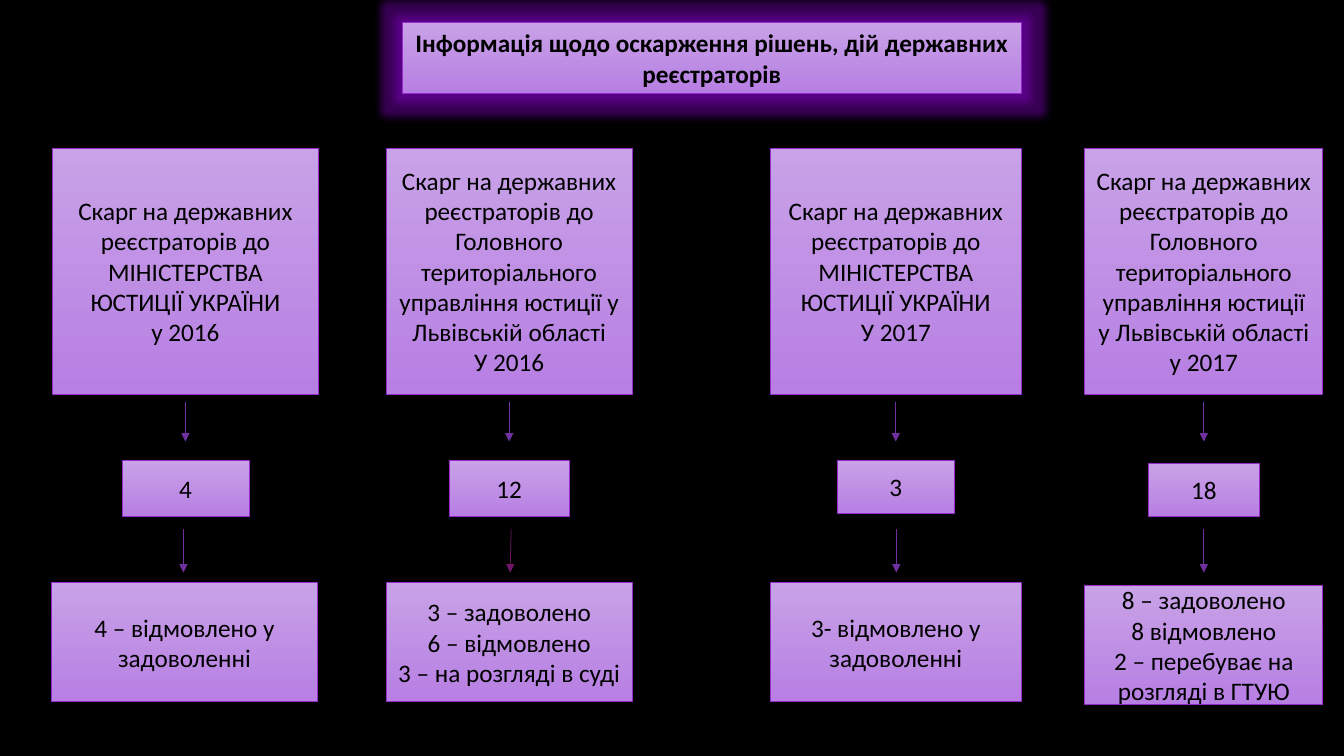
from lxml import etree
from pptx import Presentation
from pptx.dml.color import RGBColor
from pptx.enum.shapes import MSO_CONNECTOR, MSO_SHAPE
from pptx.enum.text import MSO_ANCHOR, PP_ALIGN
from pptx.oxml import parse_xml
from pptx.oxml.ns import nsdecls, qn
from pptx.util import Inches, Pt

RECTANGLE = MSO_SHAPE.RECTANGLE
STRAIGHT = MSO_CONNECTOR.STRAIGHT
MIDDLE = MSO_ANCHOR.MIDDLE
CENTER = PP_ALIGN.CENTER

BLACK = RGBColor(0x00, 0x00, 0x00)
LILAC_LIGHT = RGBColor(0xC8, 0xA1, 0xE7)
LILAC_DARK = RGBColor(0xB7, 0x7F, 0xE3)
BORDER = RGBColor(0x97, 0x2A, 0xCD)
PURPLE = RGBColor(0x70, 0x30, 0xA0)
PLUM = RGBColor(0x72, 0x14, 0x67)
GLOW = RGBColor(0x8A, 0x00, 0xD0)

TITLE = "Інформація щодо оскарження рішень, дій державних реєстраторів"
MINISTRY = "Скарг на державних реєстраторів до МІНІСТЕРСТВА ЮСТИЦІЇ УКРАЇНИ"
REGIONAL_OFFICE = ("Скарг на державних реєстраторів до Головного територіального "
                   "управління юстиції у Львівській області")

COLUMNS = [
    {"left": 0.52, "width": 2.64, "authority": [MINISTRY, "у 2016"],
     "count": "4", "count_box": (4.57, 1.26, 0.55),
     "outcome": ["4 – відмовлено у задоволенні"], "outcome_at": (0.51, 5.78),
     "outcome_arrow": (1.82, 1.82, PURPLE)},
    {"left": 3.83, "width": 2.44, "authority": [REGIONAL_OFFICE, "У 2016"],
     "count": "12", "count_box": (4.57, 1.19, 0.55),
     "outcome": ["3 – задоволено", "6 – відмовлено", "3 – на розгляді в суді"],
     "outcome_at": (3.83, 5.78), "outcome_arrow": (5.07, 5.06, PLUM)},
    {"left": 7.64, "width": 2.49, "authority": [MINISTRY, "У 2017"],
     "count": "3", "count_box": (4.57, 1.16, 0.52),
     "outcome": ["3- відмовлено у задоволенні"], "outcome_at": (7.64, 5.78),
     "outcome_arrow": (8.89, 8.89, PURPLE)},
    {"left": 10.76, "width": 2.36, "authority": [REGIONAL_OFFICE, "у 2017"],
     "count": "18", "count_box": (4.6, 1.1, 0.52),
     "outcome": ["8 – задоволено", "8 відмовлено", "2 – перебуває на розгляді в ГТУЮ"],
     "outcome_at": (10.76, 5.81), "outcome_arrow": (11.94, 11.94, PURPLE)},
]
AUTHORITY_TOP, AUTHORITY_HEIGHT = 1.47, 2.44
OUTCOME_HEIGHT = 1.18
COUNT_ARROW_SPAN = (3.99, 4.38)
OUTCOME_ARROW_SPAN = (5.25, 5.68)


def add_box(slide, left, top, width, height, lines, bold=False):
    box = slide.shapes.add_shape(
        RECTANGLE, Inches(left), Inches(top), Inches(width), Inches(height))
    box.shadow.inherit = False
    box.fill.gradient()
    box.fill.gradient_angle = 270
    for stop, color in zip(box.fill.gradient_stops, (LILAC_LIGHT, LILAC_DARK)):
        stop.color.rgb = color
    box.line.color.rgb = BORDER
    box.line.width = Pt(0.5)
    frame = box.text_frame
    frame.word_wrap = True
    frame.vertical_anchor = MIDDLE
    for index, line in enumerate(lines):
        paragraph = frame.add_paragraph() if index else frame.paragraphs[0]
        paragraph.alignment = CENTER
        run = paragraph.add_run()
        run.text = line
        run.font.name = "Calibri"
        run.font.size = Pt(18)
        run.font.bold = bold
        run.font.color.rgb = BLACK
    return box


def add_glow(box):
    effects = box._element.spPr.find(qn("a:effectLst"))
    effects.append(parse_xml(
        f'<a:glow {nsdecls("a")} rad="139700"><a:srgbClr val="{GLOW}">'
        '<a:alpha val="40000"/></a:srgbClr></a:glow>'))


def add_arrow(slide, start_x, end_x, span, color):
    top, bottom = span
    arrow = slide.shapes.add_connector(
        STRAIGHT, Inches(start_x), Inches(top), Inches(end_x), Inches(bottom))
    arrow.line.color.rgb = color
    arrow.line.width = Pt(0.5)
    properties = arrow._element.spPr
    etree.SubElement(properties.find(qn("a:ln")), qn("a:tailEnd"), type="triangle")
    etree.SubElement(properties, qn("a:effectLst"))


def main():
    deck = Presentation()
    deck.slide_width, deck.slide_height = Inches(13.33), Inches(7.5)
    slide = deck.slides.add_slide(deck.slide_layouts[6])
    slide.background.fill.solid()
    slide.background.fill.fore_color.rgb = BLACK

    add_glow(add_box(slide, 3.99, 0.22, 6.14, 0.71, [TITLE], bold=True))

    for column in COLUMNS:
        left, width = column["left"], column["width"]
        center = left + width / 2
        add_box(slide, left, AUTHORITY_TOP, width, AUTHORITY_HEIGHT, column["authority"])
        add_arrow(slide, center, center, COUNT_ARROW_SPAN, PURPLE)

        count_top, count_width, count_height = column["count_box"]
        add_box(slide, center - count_width / 2, count_top,
                count_width, count_height, [column["count"]])

        start_x, end_x, color = column["outcome_arrow"]
        add_arrow(slide, start_x, end_x, OUTCOME_ARROW_SPAN, color)
        outcome_left, outcome_top = column["outcome_at"]
        add_box(slide, outcome_left, outcome_top, width, OUTCOME_HEIGHT, column["outcome"])

    deck.save("out.pptx")


if __name__ == "__main__":
    main()
